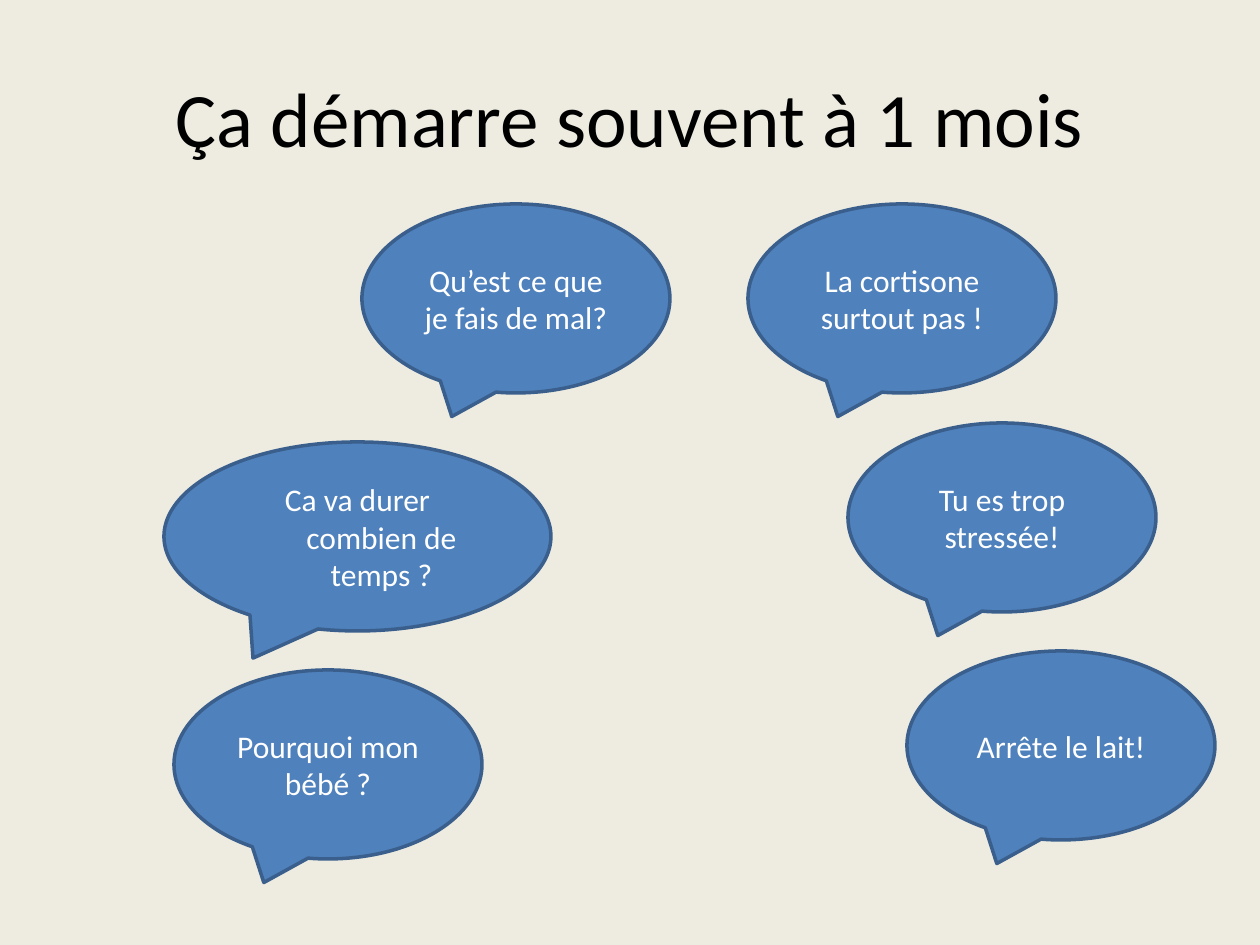
from pptx import Presentation
from pptx.dml.color import RGBColor
from pptx.enum.shapes import MSO_SHAPE
from pptx.enum.text import MSO_ANCHOR, PP_ALIGN
from pptx.util import Pt

BUBBLE = MSO_SHAPE.OVAL_CALLOUT
MIDDLE, CENTER = MSO_ANCHOR.MIDDLE, PP_ALIGN.CENTER
PX = 914400 / 126

# Content: text, left, top (px)
TITLE = "Ça démarre souvent à 1 mois"
WIDE = ("Ca va durer combien de temps ?", 164, 442)
QUOTES = [
    ("Qu’est ce que je fais de mal?", 362, 204),
    ("Pourquoi mon bébé ?", 174, 670),
    ("La cortisone surtout pas !", 748, 204),
    ("Tu es trop stressée!", 848, 423),
    ("Arrête le lait!", 907, 651),
]
WIDTH, WIDE_W, HEIGHT = 308, 387, 189
INDENT = 48
TAIL = (-0.27, 0.644)

THEME = {
    "font": "Calibri",
    "back": RGBColor.from_string("EEECE1"),
    "fill": RGBColor.from_string("4F81BD"),
    "line": RGBColor.from_string("3A5F8C"),
    "dark": RGBColor.from_string("000000"),
    "light": RGBColor.from_string("FFFFFF"),
    "title": Pt(44),
    "body": Pt(18),
    "edge": Pt(2),
}


def emu(px):
    return round(px * PX)


def write(shape, text, size, color):
    frame = shape.text_frame
    frame.text = text
    frame.word_wrap = True
    frame.vertical_anchor = MIDDLE
    para = frame.paragraphs[0]
    para.alignment = CENTER
    font = para.runs[0].font
    font.name, font.size = THEME["font"], THEME[size]
    font.color.rgb = THEME[color]
    return para


def add_bubble(slide, text, left, top, width=WIDTH):
    shape = slide.shapes.add_shape(
        BUBBLE, emu(left), emu(top), emu(width), emu(HEIGHT))
    shape.shadow.inherit = False
    shape.fill.solid()
    shape.fill.fore_color.rgb = THEME["fill"]
    shape.line.color.rgb = THEME["line"]
    shape.line.width = THEME["edge"]
    return shape, write(shape, text, "body", "light")


def main():
    deck = Presentation()
    deck.slide_width, deck.slide_height = emu(1260), emu(945)
    slide = deck.slides.add_slide(deck.slide_layouts[5])
    slide.background.fill.solid()
    slide.background.fill.fore_color.rgb = THEME["back"]

    # Title
    title = slide.shapes.title
    title.left, title.top = emu(63), emu(38)
    title.width, title.height = emu(1134), emu(157)
    write(title, TITLE, "title", "dark")

    # Wide bubble with a hanging indent and a longer tail
    shape, para = add_bubble(slide, *WIDE, width=WIDE_W)
    for index, value in enumerate(TAIL):
        shape.adjustments[index] = value
    props = para._p.get_or_add_pPr()
    props.set("marL", str(emu(INDENT)))
    props.set("indent", str(-emu(INDENT)))

    # Other bubbles
    for quote in QUOTES:
        add_bubble(slide, *quote)

    deck.save("out.pptx")


if __name__ == "__main__":
    main()
